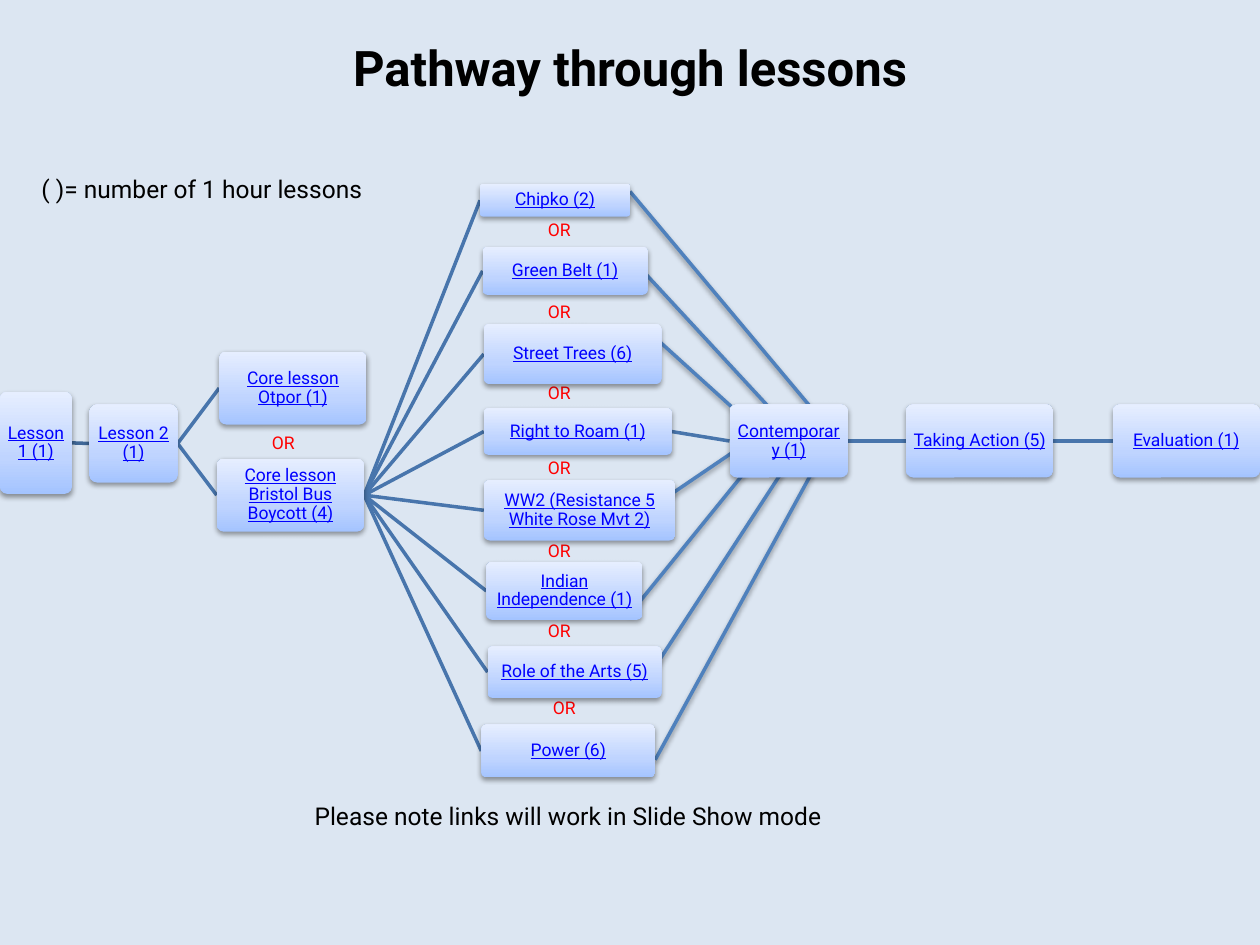
from copy import deepcopy

from lxml import etree
from pptx import Presentation
from pptx.dml.color import RGBColor
from pptx.enum.shapes import MSO_CONNECTOR, MSO_SHAPE
from pptx.enum.text import MSO_ANCHOR, MSO_AUTO_SIZE, PP_ALIGN
from pptx.oxml.ns import qn
from pptx.util import Inches, Pt

STRAIGHT = MSO_CONNECTOR.STRAIGHT
ROUND = MSO_SHAPE.ROUNDED_RECTANGLE
MIDDLE = MSO_ANCHOR.MIDDLE
GROW = MSO_AUTO_SIZE.SHAPE_TO_FIT_TEXT
LEFT, CENTER = PP_ALIGN.LEFT, PP_ALIGN.CENTER

FONT = "Roboto"
PALE = RGBColor(0xDC, 0xE6, 0xF2)
BLACK = RGBColor(0, 0, 0)
RED = RGBColor(0xFF, 0, 0)
BLUE = RGBColor(0, 0, 0xFF)
LOW = RGBColor(0xA4, 0xC4, 0xFF)
MID = RGBColor(0xBF, 0xD4, 0xFF)
HIGH = RGBColor(0xE6, 0xEE, 0xFF)
START = RGBColor(0x3F, 0x67, 0x97)
STEEL = RGBColor(0x48, 0x75, 0xAC)
BRIGHT = RGBColor(0x4F, 0x81, 0xBD)

FIRST = ("Lesson 1 (1)", 0, 3.11, 0.57, 0.81)
SECOND = ("Lesson 2 (1)", 0.71, 3.21, 0.7, 0.62)
OTPOR = ("Core lesson Otpor (1)", 1.74, 2.79, 1.17, 0.58)
BRISTOL = ("Core lesson Bristol Bus Boycott (4)", 1.72, 3.64, 1.17, 0.58)
TOPICS = [
    ("Chipko (2)", 3.81, 1.46, 1.19, 0.26),
    ("Green Belt (1)", 3.83, 1.96, 1.31, 0.38),
    ("Street Trees (6)", 3.84, 2.57, 1.41, 0.48),
    ("Right to Roam (1)", 3.84, 3.24, 1.49, 0.37),
    ("WW2 (Resistance 5 White Rose Mvt 2)", 3.84, 3.81, 1.52, 0.48),
    ("Indian Independence (1)", 3.86, 4.46, 1.24, 0.46),
    ("Role of the Arts (5)", 3.87, 5.13, 1.38, 0.41),
    ("Power (6)", 3.82, 5.75, 1.38, 0.42),
]
ROAM = TOPICS[3]
MODERN = ("Contemporary (1)", 5.79, 3.21, 0.94, 0.58)
ACTION = ("Taking Action (5)", 7.19, 3.21, 1.17, 0.58)
FINAL = ("Evaluation (1)", 8.83, 3.21, 1.17, 0.58)
BOXES = [FIRST, SECOND, OTPOR, BRISTOL, *TOPICS, MODERN, ACTION, FINAL]

LINKS = [(SECOND, OTPOR), (SECOND, BRISTOL), (ROAM, MODERN),
         (MODERN, ACTION), (ACTION, FINAL)]
LINKS += [(BRISTOL, topic) for topic in TOPICS]

MERGES = [
    (5.2, 6.03, 6.45, 3.74), (5.2, 5.29, 6.21, 3.74), (5, 4.87, 5.99, 3.65),
    (5.3, 3.94, 5.83, 3.58), (5.2, 2.68, 5.83, 3.25), (5, 2.04, 6.12, 3.25),
    (5, 1.52, 6.45, 3.25),
]
CHOICES = [(2.06, 3.38), (4.25, 1.69), (4.25, 2.34), (4.25, 2.98),
           (4.25, 3.58), (4.25, 4.24), (4.25, 4.87), (4.29, 5.48)]


def add_run(frame, text, size, color, align=LEFT):
    para = frame.paragraphs[0]
    para.alignment = align
    run = para.add_run()
    run.text = text
    font = run.font
    font.name, font.size = FONT, Pt(size)
    font.color.rgb = color
    return run


def add_shade(effects):
    shade = etree.SubElement(effects, qn("a:outerShdw"), blurRad=str(Pt(3.1)),
                             dist=str(Pt(1.6)), dir="5400000", rotWithShape="0")
    color = etree.SubElement(shade, qn("a:srgbClr"), val=str(BLACK))
    etree.SubElement(color, qn("a:alpha"), val="38000")


def add_line(slide, ends, color, shaded=False):
    line = slide.shapes.add_connector(STRAIGHT, *map(Inches, ends))
    line.line.color.rgb = color
    line.line.width = Pt(2)
    effects = etree.SubElement(line._element.spPr, qn("a:effectLst"))
    if shaded:
        add_shade(effects)


def add_link(slide, left, right, color=STEEL):
    _, x, y, width, height = left
    _, end, top, _, tall = right
    add_line(slide, (x + width, y + height / 2, end, top + tall / 2), color)


def fill_box(fill):
    fill.gradient()
    fill.gradient_angle = 90
    stops = fill.gradient_stops
    first = stops[0]._gs
    first.addnext(deepcopy(first))
    for stop, place, color in zip(fill.gradient_stops, (0, 0.35, 1),
                                  (LOW, MID, HIGH)):
        stop.position = place
        stop.color.rgb = color


def add_box(slide, text, *place):
    box = slide.shapes.add_shape(ROUND, *map(Inches, place))
    box.adjustments[0] = 0.1
    fill_box(box.fill)
    box.line.fill.background()
    box.shadow.inherit = False
    add_shade(box._element.spPr.find(qn("a:effectLst")))
    frame = box.text_frame
    frame.word_wrap = True
    frame.vertical_anchor = MIDDLE
    frame.margin_left = frame.margin_right = Inches(0.03)
    frame.margin_top = frame.margin_bottom = Inches(0.03)
    run = add_run(frame, text, 10, BLUE, CENTER)
    run.font.underline = True
    frame.paragraphs[0].line_spacing = 0.9


def add_label(slide, text, place, size, color, align=LEFT):
    frame = slide.shapes.add_textbox(*map(Inches, place)).text_frame
    frame.word_wrap = True
    frame.auto_size = GROW
    add_run(frame, text, size, color, align)


def set_title(slide, text):
    title = slide.shapes.title
    title.left, title.top = Inches(0.5), Inches(0.21)
    title.width, title.height = Inches(9), Inches(0.64)
    title.text_frame.vertical_anchor = MIDDLE
    add_run(title.text_frame, text, 28, BLACK, CENTER).font.bold = True


def main():
    deck = Presentation()
    deck.slide_width, deck.slide_height = Inches(10), Inches(7.5)
    slide = deck.slides.add_slide(deck.slide_layouts[5])
    back = slide.background.fill
    back.solid()
    back.fore_color.rgb = PALE

    for ends in MERGES:
        add_line(slide, ends, BRIGHT, shaded=True)
    for x, y in CHOICES:
        add_label(slide, "OR", (x, y, 0.45, 0.27), 10, RED)
    add_link(slide, FIRST, SECOND, START)
    for left, right in LINKS:
        add_link(slide, left, right)
    for box in BOXES:
        add_box(slide, *box)

    set_title(slide, "Pathway through lessons")
    add_label(slide, "( )= number of 1 hour lessons",
              (0.23, 1.33, 2.86, 0.34), 14, BLACK)
    add_label(slide, "Please note links will work in Slide Show mode",
              (1.66, 6.31, 5.7, 0.34), 14, BLACK, CENTER)
    deck.save("out.pptx")


if __name__ == "__main__":
    main()
